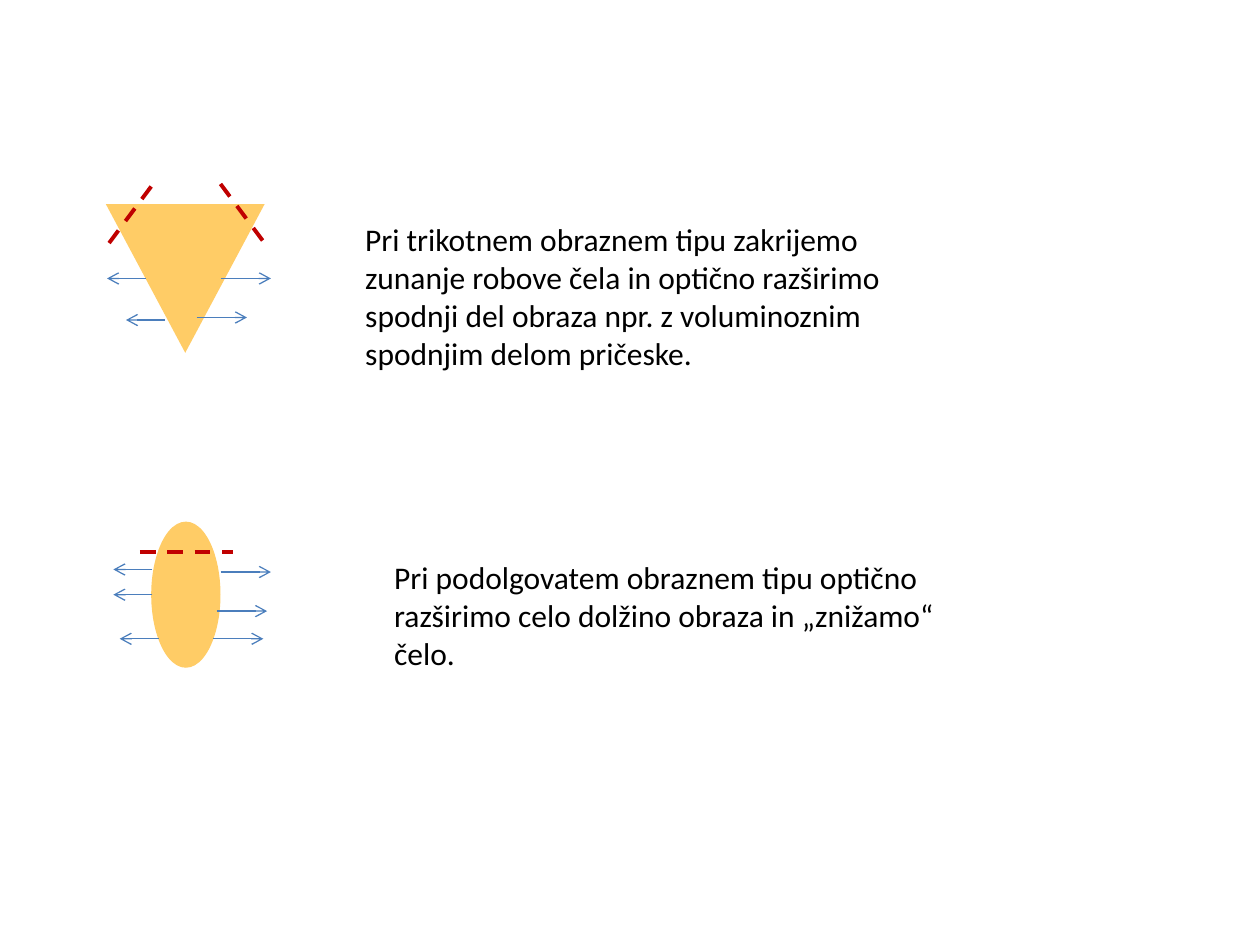
from typing import NamedTuple

import pptx
import pptx.dml.color
import pptx.enum.dml
import pptx.enum.shapes
import pptx.enum.text
import pptx.oxml.ns
import pptx.oxml.xmlchemy
import pptx.shapes.connector
import pptx.slide
import pptx.util
from pptx.util import Inches

SKIN = pptx.dml.color.RGBColor(0xFF, 0xCC, 0x66)
RED = pptx.dml.color.RGBColor(0xC0, 0x00, 0x00)
BLUE = pptx.dml.color.RGBColor(0x4B, 0x7E, 0xBC)
BLACK = pptx.dml.color.RGBColor(0x00, 0x00, 0x00)
KIND = pptx.enum.shapes.MSO_SHAPE
RIGHT, LEFT = 0.4, -0.31  # arrow reach to each side


class Face(NamedTuple):
    kind: KIND
    x: float
    y: float
    w: float
    h: float
    turn: float = 0


class Dash(NamedTuple):
    x1: float
    y1: float
    x2: float
    y2: float


class Arrow(NamedTuple):
    x: float
    y: float
    reach: float


class Note(NamedTuple):
    x: float
    y: float
    w: float
    h: float
    text: str


FACES = [
    Face(KIND.ISOSCELES_TRIANGLE, 0.84, 1.62, 1.26, 1.18, 180),
    Face(KIND.OVAL, 1.2, 4.14, 0.55, 1.16),
]
DASHES = [
    Dash(1.75, 1.46, 2.1, 1.93),
    Dash(1.2, 1.48, 0.85, 1.95),
    Dash(1.11, 4.38, 1.85, 4.38),
]
ARROWS = [
    Arrow(1.75, 2.21, RIGHT),
    Arrow(1.56, 2.52, RIGHT),
    Arrow(1.16, 2.21, LEFT),
    Arrow(1.31, 2.54, LEFT),
    Arrow(1.75, 4.54, RIGHT),
    Arrow(1.72, 4.85, RIGHT),
    Arrow(1.69, 5.07, RIGHT),
    Arrow(1.26, 5.07, LEFT),
    Arrow(1.21, 4.72, LEFT),
    Arrow(1.21, 4.52, LEFT),
]
NOTES = [
    Note(2.8, 1.7, 4.65, 1.31,
         "Pri trikotnem obraznem tipu zakrijemo zunanje robove čela in "
         "optično razširimo spodnji del obraza npr. z voluminoznim "
         "spodnjim delom pričeske."),
    Note(3.03, 4.38, 4.96, 1.01,
         "Pri podolgovatem obraznem tipu optično razširimo celo dolžino "
         "obraza in „znižamo“ čelo."),
]


def add_face(slide: pptx.slide.Slide, face: Face) -> None:
    shape = slide.shapes.add_shape(
        face.kind, Inches(face.x), Inches(face.y), Inches(face.w), Inches(face.h))
    shape.rotation = face.turn
    shape.shadow.inherit = False
    shape.fill.solid()
    shape.fill.fore_color.rgb = SKIN
    shape.line.fill.background()


def add_line(slide: pptx.slide.Slide, ends: Dash,
             color: pptx.dml.color.RGBColor,
             width: float) -> pptx.shapes.connector.Connector:
    line = slide.shapes.add_connector(
        pptx.enum.shapes.MSO_CONNECTOR.STRAIGHT, *map(Inches, ends))
    line.line.color.rgb = color
    line.line.width = pptx.util.Pt(width)
    line._element.spPr.append(pptx.oxml.xmlchemy.OxmlElement("a:effectLst"))
    return line


def add_dash(slide: pptx.slide.Slide, dash: Dash) -> None:
    line = add_line(slide, dash, RED, 2.25)
    line.line.dash_style = pptx.enum.dml.MSO_LINE.DASH


def add_arrow(slide: pptx.slide.Slide, arrow: Arrow) -> None:
    ends = Dash(arrow.x, arrow.y, arrow.x + arrow.reach, arrow.y)
    line = add_line(slide, ends, BLUE, 0.75)
    tail = pptx.oxml.xmlchemy.OxmlElement("a:tailEnd")
    tail.set("type", "arrow")
    line._element.spPr.find(pptx.oxml.ns.qn("a:ln")).append(tail)


def add_note(slide: pptx.slide.Slide, note: Note) -> None:
    box = slide.shapes.add_textbox(
        Inches(note.x), Inches(note.y), Inches(note.w), Inches(note.h))
    frame = box.text_frame
    frame.word_wrap = True
    frame.auto_size = pptx.enum.text.MSO_AUTO_SIZE.SHAPE_TO_FIT_TEXT
    frame.text = note.text
    font = frame.paragraphs[0].font
    font.name = "Calibri"
    font.size = pptx.util.Pt(18)
    font.color.rgb = BLACK


def main() -> None:
    deck = pptx.Presentation()
    deck.slide_width, deck.slide_height = Inches(10), Inches(7.5)
    slide = deck.slides.add_slide(deck.slide_layouts[6])
    for face in FACES:
        add_face(slide, face)
    for dash in DASHES:
        add_dash(slide, dash)
    for arrow in ARROWS:
        add_arrow(slide, arrow)
    for note in NOTES:
        add_note(slide, note)
    deck.save("out.pptx")


if __name__ == "__main__":
    main()
